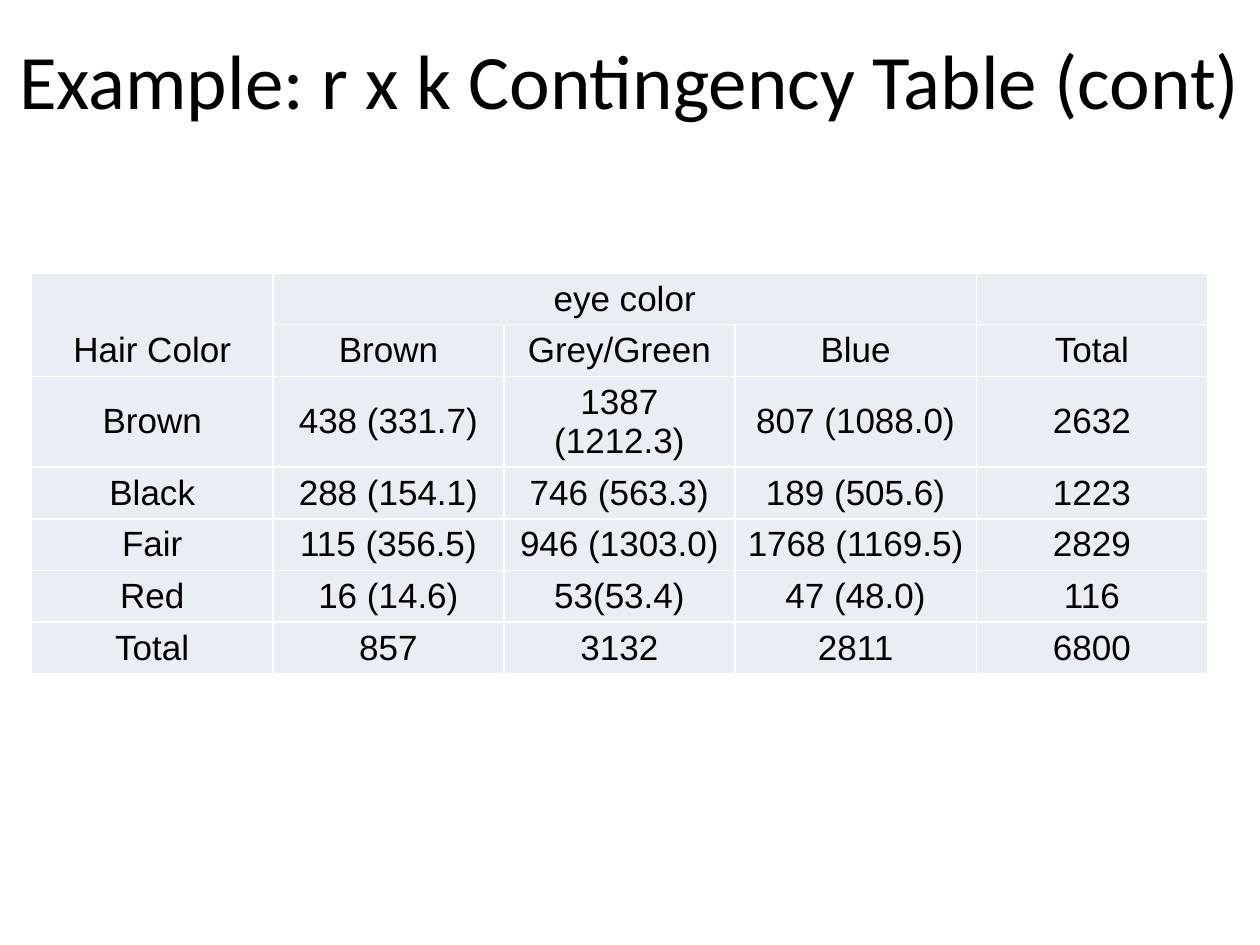
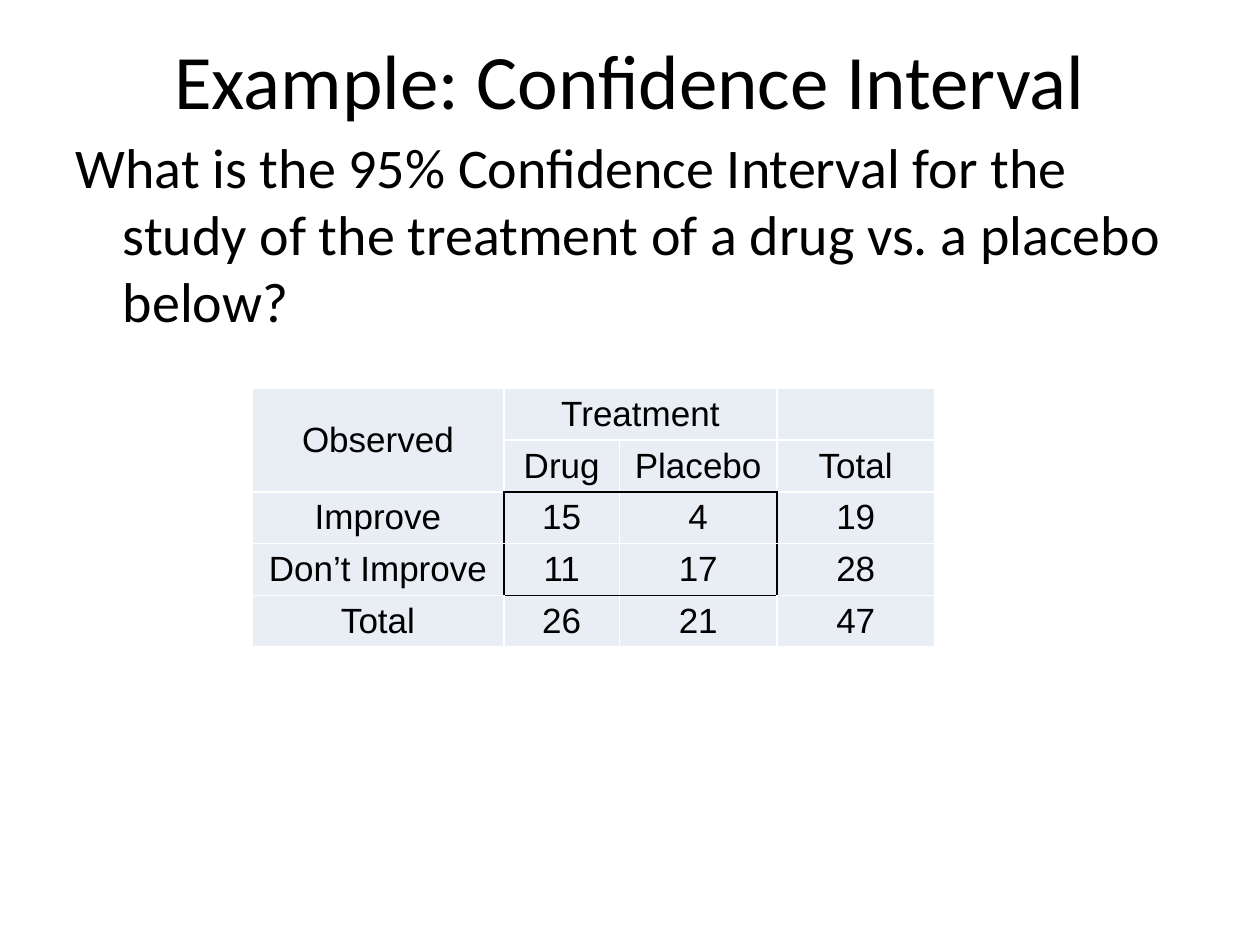
import lxml.etree
import pptx
import pptx.dml.color
import pptx.enum.text
import pptx.oxml.ns
import pptx.util

BLACK = pptx.dml.color.RGBColor(0x00, 0x00, 0x00)
WHITE = pptx.dml.color.RGBColor(0xFF, 0xFF, 0xFF)
CELL_FILL = pptx.dml.color.RGBColor(0xE9, 0xED, 0xF4)
TEXT_FONT = "Calibri"
TABLE_FONT = "Arial"
COLUMNS, ROWS = 120, 90
WIDTH, HEIGHT = pptx.util.Inches(10), pptx.util.Inches(7.5)
TITLE_ROWS = 15
TABLE_ROW = 4.92
SIDES = (("L", 0, -1), ("R", 0, 1), ("T", -1, 0), ("B", 1, 0))
MIDDLE = pptx.enum.text.MSO_ANCHOR.MIDDLE
BOTTOM = pptx.enum.text.MSO_ANCHOR.BOTTOM
CENTER = pptx.enum.text.PP_ALIGN.CENTER

EYE_COLOR = [
    ["Hair Color", "eye color", "", "", ""],
    ["", "Brown", "Grey/Green", "Blue", "Total"],
    ["Brown", "438 (331.7)", "1387 (1212.3)", "807 (1088.0)", "2632"],
    ["Black", "288 (154.1)", "746 (563.3)", "189 (505.6)", "1223"],
    ["Fair", "115 (356.5)", "946 (1303.0)", "1768 (1169.5)", "2829"],
    ["Red", "16 (14.6)", "53(53.4)", "47 (48.0)", "116"],
    ["Total", "857", "3132", "2811", "6800"],
]
TREATMENT = [
    ["Observed", "Treatment", "", ""],
    ["", "Drug", "Placebo", "Total"],
    ["Improve", "15", "4", "19"],
    ["Don’t Improve", "11", "17", "28"],
    ["Total", "26", "21", "47"],
]


def across(columns):
    return round(WIDTH * columns / COLUMNS)


def down(rows):
    return round(HEIGHT * rows / ROWS)


def place(sp, left, top, width, height):
    sp.left, sp.top = across(left), down(top)
    sp.width, sp.height = across(width), down(height)


def style_text(tf, font, size, align=None):
    for p in tf.paragraphs:
        p.alignment = align
        for r in p.runs:
            r.font.name = font
            r.font.size = pptx.util.Pt(size)
            r.font.bold = False
            r.font.color.rgb = BLACK


def add_slide(prs, layout, title, margin):
    s = prs.slides.add_slide(prs.slide_layouts[layout])
    sp = s.shapes.title
    place(sp, margin, 0, COLUMNS - 2 * margin, TITLE_ROWS)
    sp.text_frame.text = title
    sp.text_frame.vertical_anchor = MIDDLE
    style_text(sp.text_frame, TEXT_FONT, 44, CENTER)
    return s


def fill_body(s, text):
    sp = s.placeholders[1]
    place(sp, 6, 12, 108, 59.4)
    sp.text_frame.text = text
    style_text(sp.text_frame, TEXT_FONT, 32)
    pPr = sp.text_frame.paragraphs[0]._p.get_or_add_pPr()
    lxml.etree.SubElement(pPr, pptx.oxml.ns.qn("a:buNone"))


def add_border(cell, side, color):
    qn = pptx.oxml.ns.qn
    tcPr = cell._tc.get_or_add_tcPr()
    ln = lxml.etree.SubElement(tcPr, qn(f"a:ln{side}"), w=str(pptx.util.Pt(1)))
    fill = lxml.etree.SubElement(ln, qn("a:solidFill"))
    lxml.etree.SubElement(fill, qn("a:srgbClr"), val=str(color))


def style_cell(cell, text, row, col, boxed):
    cell.text = text
    cell.vertical_anchor = MIDDLE
    style_text(cell.text_frame, TABLE_FONT, 20, CENTER)
    for side, dr, dc in SIDES:
        crosses = ((row, col) in boxed) != ((row + dr, col + dc) in boxed)
        add_border(cell, side, BLACK if crosses else WHITE)
    cell.fill.solid()
    cell.fill.fore_color.rgb = CELL_FILL


def add_contingency_table(s, data, left, top, widths, boxed=(), corner=MIDDLE):
    frame = s.shapes.add_table(
        len(data), len(widths), across(left), down(top),
        across(sum(widths)), down(TABLE_ROW * len(data)))
    table = frame.table
    table.first_row = table.horz_banding = False
    for column, width in zip(table.columns, widths):
        column.width = across(width)
    for row, texts in enumerate(data):
        table.rows[row].height = down(TABLE_ROW)
        for col, text in enumerate(texts):
            style_cell(table.cell(row, col), text, row, col, boxed)
    table.cell(0, 0).merge(table.cell(1, 0))
    table.cell(0, 1).merge(table.cell(0, len(widths) - 2))
    table.cell(0, 0).vertical_anchor = corner


def main():
    prs = pptx.Presentation()
    prs.slide_width, prs.slide_height = WIDTH, HEIGHT

    s = add_slide(prs, 5, "Example: r x k Contingency Table (cont)", 0)
    add_contingency_table(s, EYE_COLOR, 3, 26, (23, 22, 22, 23, 22), corner=BOTTOM)

    s = add_slide(prs, 1, "Example: Confidence Interval", 6)
    fill_body(s, "What is the 95% Confidence Interval for the study "
                 "of the treatment of a drug vs. a placebo below?")
    observed = {(row, col) for row in (2, 3) for col in (1, 2)}
    add_contingency_table(s, TREATMENT, 24, 37, (24, 11, 15, 15), observed)

    prs.save("out.pptx")


if __name__ == "__main__":
    main()
